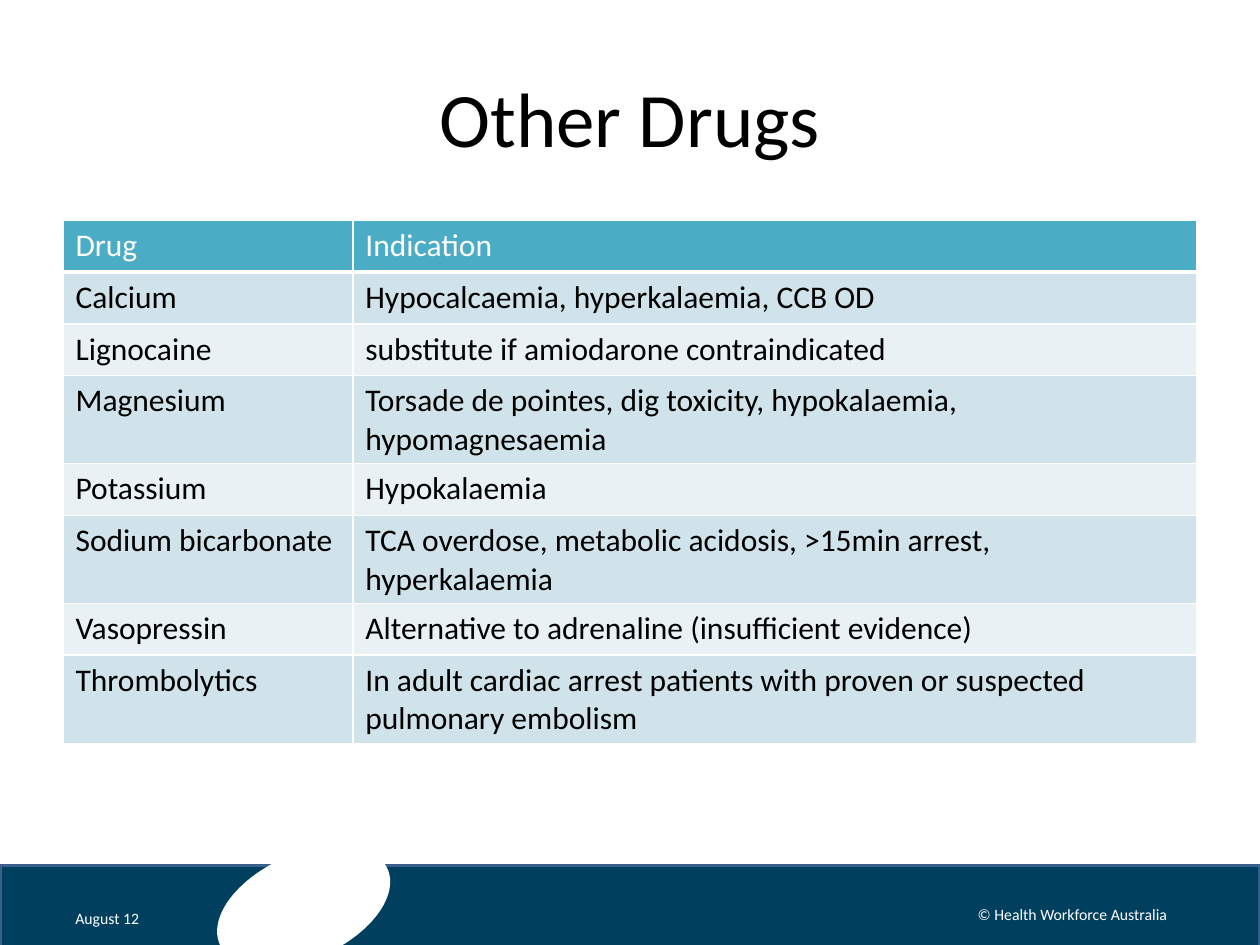
"""Build the Other Drugs slide: a table of drugs and indications above a footer band."""
from lxml.etree import SubElement
from pptx import Presentation
from pptx.dml.color import RGBColor
from pptx.enum.shapes import MSO_SHAPE
from pptx.enum.text import MSO_ANCHOR, PP_ALIGN
from pptx.oxml.ns import qn
from pptx.util import Inches, Pt

WHITE, BLACK, NAVY, EDGE = "FFFFFF", "000000", "003F5E", "3A5F8C"
HEADER, BAND_DARK, BAND_LIGHT = "4BACC6", "D0E3EA", "E9F1F5"


def paint(color_format, hex_color):
    color_format.rgb = RGBColor.from_string(hex_color)


def write(frame, words, size, color, align=PP_ALIGN.LEFT):
    frame.text = words
    line = frame.paragraphs[0]
    line.alignment = align
    font_format = {"name": "Calibri", "size": Pt(size), "bold": False}
    for attribute, value in font_format.items():
        setattr(line.font, attribute, value)
    paint(line.font.color, color)


deck = Presentation()
deck.slide_width, deck.slide_height = Inches(10), Inches(7.5)
column, row = deck.slide_width // 20, deck.slide_height // 15
slide = deck.slides.add_slide(deck.slide_layouts[6])

footer_parts = [
    (MSO_SHAPE.RECTANGLE, (0, 13.74, 20, 1.3), NAVY, 0),
    (MSO_SHAPE.OVAL, (3.36, 13.56, 2.92, 1.66), WHITE, 335.7),
]
for outline, (left, top, width, height), color, turn in footer_parts:
    part = slide.shapes.add_shape(
        outline, int(left * column), int(top * row), int(width * column), int(height * row))
    part.shadow.inherit = False
    part.rotation = turn
    part.fill.solid()
    paint(part.fill.fore_color, color)
    if color == NAVY:
        paint(part.line.color, EDGE)
        part.line.width = Pt(2)
    else:
        part.line.fill.background()

captions = [
    ("Other Drugs", (1, 0.6, 18, 2.5), 44, BLACK, PP_ALIGN.CENTER),
    ("August 12", (1, 14.28, 1.6, 0.58), 9, WHITE, PP_ALIGN.LEFT),
    ("© Health Workforce Australia", (14.88, 14.12, 4.28, 0.8), 9, WHITE, PP_ALIGN.CENTER),
]
for words, (left, top, width, height), size, color, align in captions:
    caption = slide.shapes.add_textbox(
        int(left * column), int(top * row), int(width * column), int(height * row))
    frame_format = {"word_wrap": True, "vertical_anchor": MSO_ANCHOR.MIDDLE}
    for attribute, value in frame_format.items():
        setattr(caption.text_frame, attribute, value)
    write(caption.text_frame, words, size, color, align)

drugs = [
    ("Drug", "Indication"),
    ("Calcium", "Hypocalcaemia, hyperkalaemia, CCB OD"),
    ("Lignocaine", "substitute if amiodarone contraindicated"),
    ("Magnesium", "Torsade de pointes, dig toxicity, hypokalaemia, hypomagnesaemia"),
    ("Potassium", "Hypokalaemia"),
    ("Sodium bicarbonate", "TCA overdose, metabolic acidosis, >15min arrest, hyperkalaemia"),
    ("Vasopressin", "Alternative to adrenaline (insufficient evidence)"),
    ("Thrombolytics",
     "In adult cardiac arrest patients with proven or suspected pulmonary embolism"),
]
drug_table = slide.shapes.add_table(
    len(drugs), 2, column, int(3.5 * row), 18 * column, int(0.82 * row) * len(drugs)).table
for table_column, share in zip(drug_table.columns, (4.6, 13.4)):
    table_column.width = int(share * column)

for index, entry in enumerate(drugs):
    if index == 0:
        band, ink = HEADER, WHITE
    else:
        band, ink = (BAND_DARK if index % 2 else BAND_LIGHT), BLACK
    for cell, words in zip(drug_table.rows[index].cells, entry):
        write(cell.text_frame, words, 18, ink)
        properties = cell._tc.get_or_add_tcPr()
        for side in ("lnL", "lnR", "lnT", "lnB"):
            weight = Pt(3) if index == 0 and side == "lnB" else Pt(1)
            border = SubElement(properties, qn(f"a:{side}"), w=str(weight))
            SubElement(SubElement(border, qn("a:solidFill")), qn("a:srgbClr"), val=WHITE)
        cell.fill.solid()
        paint(cell.fill.fore_color, band)

deck.save("out.pptx")
